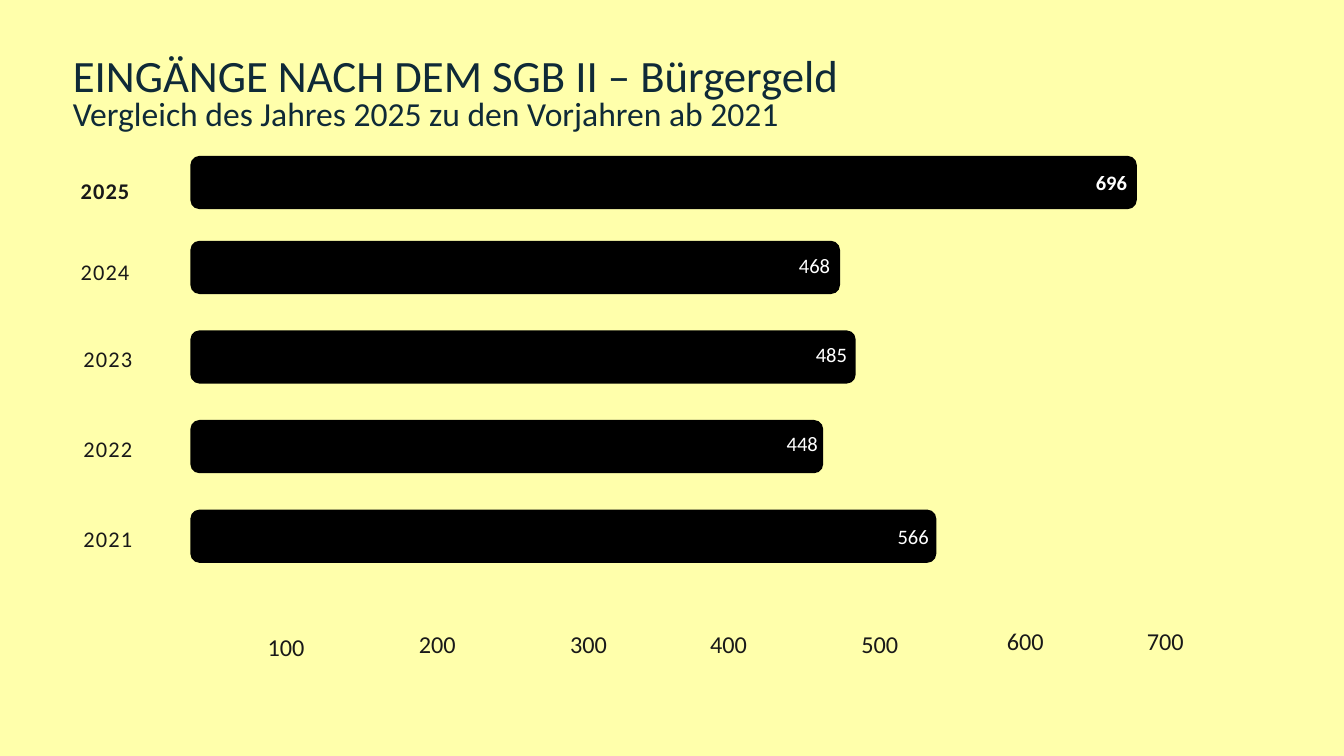
from pptx import Presentation
from pptx.dml.color import RGBColor
from pptx.enum.shapes import MSO_SHAPE
from pptx.enum.text import MSO_ANCHOR, MSO_AUTO_SIZE, PP_ALIGN
from pptx.oxml.ns import qn
from pptx.util import Inches, Pt

COLUMNS, ROWS = 240, 135
BAR_LEFT, BAR_HEIGHT = 34, 9.5
LABEL_WIDTH = 20.2

# year, bar top, bar width, year label (left, top), value, value label (left, top)
BARS = [
    ("2025", 27.84, 169, (-3.5, 30.5), "696", (194.5, 29.8)),
    ("2024", 43, 116, (-3.5, 44.9), "468", (141.5, 44.6)),
    ("2023", 59, 118.8, (-3, 60.5), "485", (144.5, 60.5)),
    ("2022", 75, 113, (-3, 76.5), "448", (139.3, 76.4)),
    ("2021", 91, 133.2, (-3, 92.5), "566", (159.1, 92.9)),
]
# left and top of the axis labels 100, 200, ...
AXIS_LABELS = [(41, 112), (68, 111.5), (95, 111.5), (120, 111.5),
               (147, 111.5), (173, 111), (198, 111)]


def color(hex_string):
    return RGBColor.from_string(hex_string)


class BarSlide:
    """Style and current slide; lengths are columns and rows of the grid."""

    font_name = "Calibri"
    background, heading, ink = "FFFFAB", "0F2A37", "191919"
    bar_fill, value_ink = "000000", "FFFFFF"

    def __init__(self, presentation):
        self.column = presentation.slide_width / COLUMNS
        self.row = presentation.slide_height / ROWS
        self.slide = presentation.slides.add_slide(presentation.slide_layouts[0])
        fill = self.slide.background.fill
        fill.solid()
        fill.fore_color.rgb = color(self.background)

    def box(self, left, top, width, height):
        return (round(left * self.column), round(top * self.row),
                round(width * self.column), round(height * self.row))

    def set_text(self, shape, text, size, ink, line=None, bold=False,
                 align=PP_ALIGN.LEFT, spacing=0, margins=(0, 0), wrap=True):
        frame = shape.text_frame
        frame.word_wrap = wrap
        frame.auto_size = MSO_AUTO_SIZE.NONE
        frame.vertical_anchor = MSO_ANCHOR.TOP
        frame.margin_left = frame.margin_right = Inches(margins[0])
        frame.margin_top = frame.margin_bottom = Inches(margins[1])
        frame.text = text
        paragraph = frame.paragraphs[0]
        paragraph.alignment = align
        paragraph.space_before = Pt(0)
        if line:
            paragraph.line_spacing = Pt(line)
        font = paragraph.font
        font.name, font.size, font.bold = self.font_name, Pt(size), bold
        font.color.rgb = color(ink)
        if spacing:
            properties = paragraph._p.pPr.find(qn("a:defRPr"))
            properties.set("spc", str(round(spacing * 100)))

    def placeholder(self, index, text, box, size, line):
        shape = self.slide.placeholders[index]
        shape.left, shape.top, shape.width, shape.height = self.box(*box)
        self.set_text(shape, text, size, self.heading, line)

    def label(self, text, left, top, width, size, ink, **style):
        shape = self.slide.shapes.add_textbox(*self.box(left, top, width, 5.7))
        self.set_text(shape, text, size, ink, **style)

    def bar(self, top, width):
        shape = self.slide.shapes.add_shape(
            MSO_SHAPE.ROUNDED_RECTANGLE,
            *self.box(BAR_LEFT, top, width, BAR_HEIGHT))
        shape.adjustments[0] = 0.17
        shape.shadow.inherit = False
        shape.fill.solid()
        shape.fill.fore_color.rgb = color(self.bar_fill)
        shape.line.fill.background()


def main():
    presentation = Presentation()
    presentation.slide_width, presentation.slide_height = Inches(20), Inches(11.25)
    page = BarSlide(presentation)

    page.placeholder(0, "EINGÄNGE NACH DEM SGB II – Bürgergeld",
                     (13, -1.1, 151.7, 16.7), size=48, line=115.2)
    page.placeholder(1, "Vergleich des Jahres 2025 zu den Vorjahren ab 2021",
                     (13, 16.2, 136, 7.3), size=36, line=45.5)

    for year, top, width, year_place, value, value_place in BARS:
        bold = year == "2025"
        page.bar(top, width)
        page.label(year, *year_place, 44.5, 24, page.ink, line=36, bold=bold,
                   align=PP_ALIGN.CENTER, spacing=1.2)
        page.label(value, *value_place, 8.2, 22, page.value_ink, bold=bold,
                   margins=(0.1, 0.05), wrap=False)

    for number, (left, top) in enumerate(AXIS_LABELS, start=1):
        page.label(str(number * 100), left, top, LABEL_WIDTH, 26, page.ink,
                   line=36.4, align=PP_ALIGN.CENTER)

    presentation.save("out.pptx")


if __name__ == "__main__":
    main()
